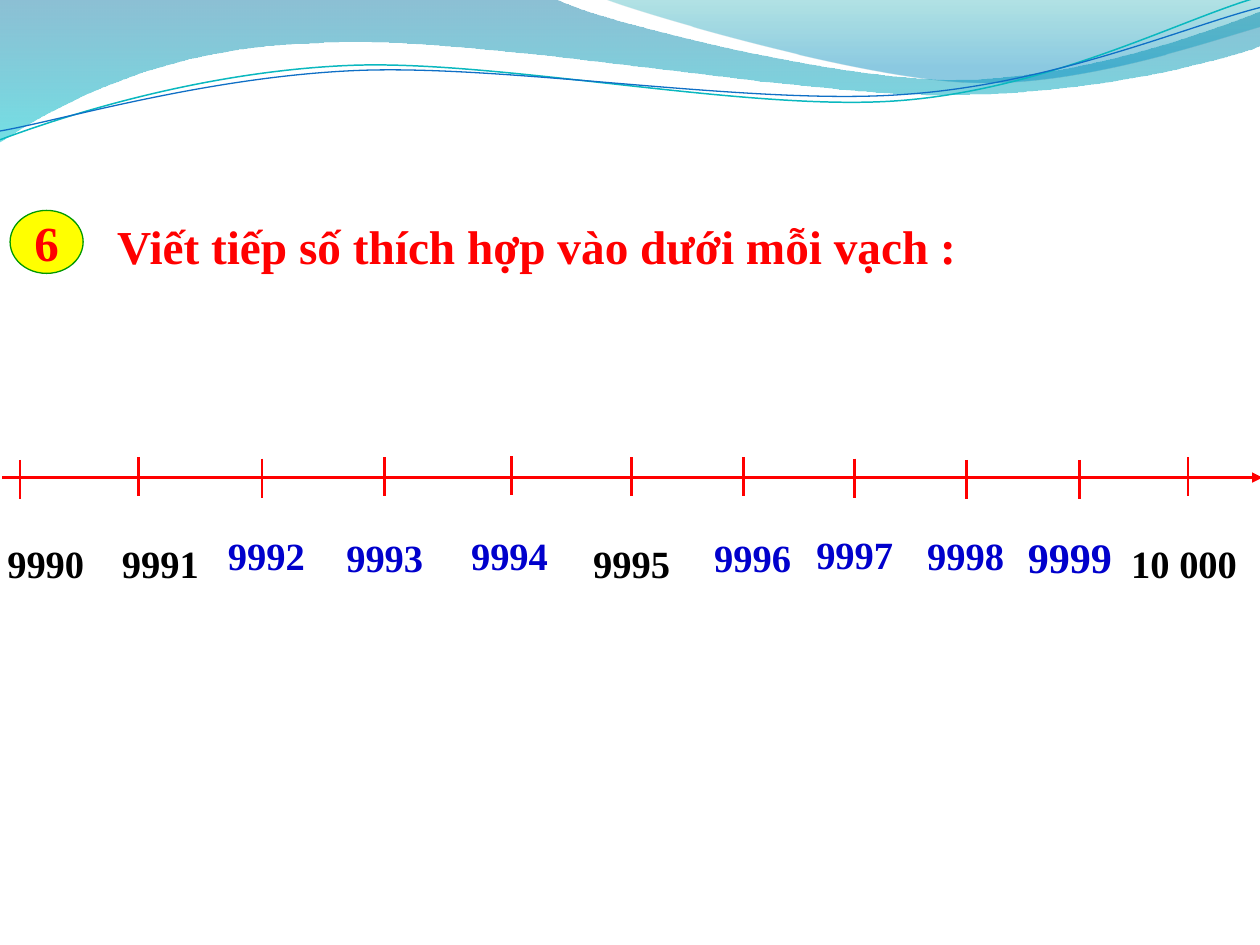
"""Build a number line exercise slide beneath a wave banner."""
from lxml import etree
from pptx import Presentation
from pptx import util as u
from pptx.dml.color import RGBColor
from pptx.enum import shapes, text
from pptx.oxml.ns import qn

WIDTH, HEIGHT = 10, 7.5
UNIT = u.Inches(0.01)
FONT = "Times New Roman"
RED = RGBColor(0xFF, 0x00, 0x00)
BLACK = RGBColor(0x00, 0x00, 0x00)
BLUE = RGBColor(0x00, 0x00, 0xCC)
YELLOW = RGBColor(0xFF, 0xFF, 0x00)
GREEN = RGBColor(0x00, 0x99, 0x00)
DEEP_BLUE = RGBColor(0x00, 0x74, 0xA1)
CYAN = RGBColor(0x00, 0xC6, 0xCF)
TEAL = RGBColor(0x00, 0xA1, 0xA9)
SKY = RGBColor(0x00, 0x8B, 0xBF)
TEAL_LINE = RGBColor(0x0A, 0xB8, 0xBF)
BLUE_LINE = RGBColor(0x0F, 0x6F, 0xC6)

TITLE = "Viết tiếp số thích hợp vào dưới mỗi vạch :"
NUMBER = "6"

BANDS = [
    ([(0, 0), (4.4, -0.01), (4.76, 0.17, 6.64, 0.63, 7.58, 0.63),
      (8.53, 0.63, 9.58, 0.26, 10, 0.09), (10.01, 0.36),
      (9.83, 0.44, 8.7, 0.76, 7.46, 0.75), (6.22, 0.75, 3.82, 0.28, 2.57, 0.34),
      (1.29, 0.36, 0.46, 0.83, -0.01, 1.13)],
     [(0, DEEP_BLUE, 45), (1, CYAN, 55)]),
    ([(4.79, -0.01), (5.09, 0.11, 6.82, 0.62, 7.69, 0.65),
      (8.56, 0.69, 9.61, 0.32, 10, 0.21), (10, 0)],
     [(0, TEAL, 30), (0.8, SKY, 45)]),
]
STRANDS = [
    ([(0, 1.11), (0.48, 0.93, 1.58, 0.57, 2.77, 0.52),
      (3.95, 0.47, 5.93, 0.89, 7.13, 0.8), (8.33, 0.71, 9.38, 0.15, 9.98, -0.02)],
     TEAL_LINE, 0.85),
    ([(0, 1.04), (0.47, 0.96, 1.64, 0.61, 2.83, 0.56),
      (4.03, 0.51, 5.97, 0.84, 7.17, 0.75), (8.36, 0.67, 9.41, 0.21, 10, 0.06)],
     BLUE_LINE, 0.75),
]
AXIS_Y, TICK_LENGTH = 3.79, 0.31
TICKS = [(0.16, 3.65), (1.1, 3.63), (2.08, 3.64), (3.05, 3.63), (4.06, 3.62),
         (5.01, 3.63), (5.9, 3.63), (6.78, 3.64), (7.67, 3.65), (8.57, 3.65),
         (9.43, 3.63)]
GIVEN = ["9990", "9991", "9995", "10 000"]
GIVEN_TABS = [0.91, 4.65, 8.92]
ANSWERS = [
    ("9992", 1.71, 4.17, 22), ("9993", 2.65, 4.19, 22), ("9994", 3.64, 4.17, 22),
    ("9996", 5.57, 4.19, 22), ("9997", 6.38, 4.16, 22), ("9998", 7.26, 4.17, 22),
    ("9999", 8.06, 4.18, 24),
]


def add_wave(page, chain, close):
    """Add a freeform whose two-value parts are lines and six-value parts curves."""
    ends = [tuple(round(value * 100) for value in part[-2:]) for part in chain]
    builder = page.shapes.build_freeform(*ends[0], scale=UNIT)
    builder.add_line_segments(ends[1:], close=close)
    wave = builder.convert_to_shape()
    wave.shadow.inherit = False
    left, top = (min(values) for values in zip(*ends))
    segments = list(wave._element.iter(qn("a:lnTo")))
    for segment, part in zip(segments, chain[1:]):
        if len(part) == 6:
            curve = etree.Element(qn("a:cubicBezTo"))
            for x, y in zip(part[::2], part[1::2]):
                etree.SubElement(curve, qn("a:pt"), x=str(round(x * 100) - left),
                                 y=str(round(y * 100) - top))
            segment.getparent().replace(segment, curve)
    return wave


def add_band(page, chain, stops):
    """Add a translucent wave shaded from top to bottom."""
    band = add_wave(page, chain, True)
    band.line.fill.background()
    band.fill.gradient()
    band.fill.gradient_angle = 270
    for stop, (position, color, _) in zip(band.fill.gradient_stops, stops):
        stop.position = position
        stop.color.rgb = color
    colors = band._element.spPr.iter(qn("a:srgbClr"))
    for node, (_, _, opacity) in zip(colors, stops):
        etree.SubElement(node, qn("a:alpha"), val=str(opacity * 1000))


def add_strand(page, chain, color, weight):
    """Add a thin wavy line."""
    strand = add_wave(page, chain, False)
    strand.fill.background()
    strand.line.color.rgb = color
    strand.line.width = u.Pt(weight)


def add_line(page, *ends):
    """Add a red line from one point to another."""
    line = page.shapes.add_connector(shapes.MSO_CONNECTOR.STRAIGHT, *map(u.Inches, ends))
    line.line.color.rgb = RED
    line.line.width = u.Pt(1.5)
    etree.SubElement(line._element.spPr, qn("a:effectLst"))
    return line


def place(box, *area):
    """Move a box to left, top, width and height."""
    box.left, box.top, box.width, box.height = map(u.Inches, area)


def write(box, words, size, color, align=text.PP_ALIGN.LEFT, wrap=True):
    """Fill a box with one bold line."""
    frame = box.text_frame
    frame.text = words
    frame.word_wrap = wrap
    frame.auto_size = text.MSO_AUTO_SIZE.NONE
    frame.vertical_anchor = text.MSO_ANCHOR.MIDDLE
    para = frame.paragraphs[0]
    para.alignment = align
    para.font.name, para.font.size, para.font.bold = FONT, u.Pt(size), True
    para.font.color.rgb = color
    return para


def add_label(page, words, size, color, *area):
    """Add a text box with one bold line."""
    box = page.shapes.add_textbox(*map(u.Inches, area))
    write(box, words, size, color)
    return box


def add_given(page):
    """Add the printed numbers as one line set on tab stops."""
    box = add_label(page, "\t".join(GIVEN), 22, BLACK, -0.04, 3.62, WIDTH, 1.38)
    box.text_frame.margin_top = u.Inches(0.36)
    tabs = etree.Element(qn("a:tabLst"))
    for stop in GIVEN_TABS:
        etree.SubElement(tabs, qn("a:tab"), pos=str(u.Inches(stop)), algn="l")
    box.text_frame.paragraphs[0]._p.get_or_add_pPr().insert(0, tabs)


def main():
    """Compose and save the deck."""
    deck = Presentation()
    deck.slide_width, deck.slide_height = u.Inches(WIDTH), u.Inches(HEIGHT)
    page = deck.slides.add_slide(deck.slide_layouts[5])
    for band in BANDS:
        add_band(page, *band)
    for strand in STRANDS:
        add_strand(page, *strand)

    axis = add_line(page, 0.02, AXIS_Y, WIDTH + 0.02, AXIS_Y)
    etree.SubElement(axis.line._get_or_add_ln(), qn("a:tailEnd"), type="triangle")
    for x, top in TICKS:
        add_line(page, x, top, x, top + TICK_LENGTH)
    add_given(page)

    badge = page.shapes.add_shape(shapes.MSO_SHAPE.OVAL, 0, 0, 0, 0)
    place(badge, 0.08, 1.67, 0.58, 0.5)
    badge.shadow.inherit = False
    badge.fill.solid()
    badge.fill.fore_color.rgb = YELLOW
    badge.line.color.rgb = GREEN
    badge.line.width = u.Pt(0.75)
    write(badge, NUMBER, 28, RED, text.PP_ALIGN.CENTER, wrap=False)

    title = page.shapes.title
    place(title, 0.83, 1.67, WIDTH - 0.83, 0.56)
    write(title, TITLE, 27, RED)

    for words, left, top, size in ANSWERS:
        width = 0.23 + 0.007 * size * len(words)
        add_label(page, words, size, BLUE, left, top, width, 0.47)

    deck.save("out.pptx")


if __name__ == "__main__":
    main()
